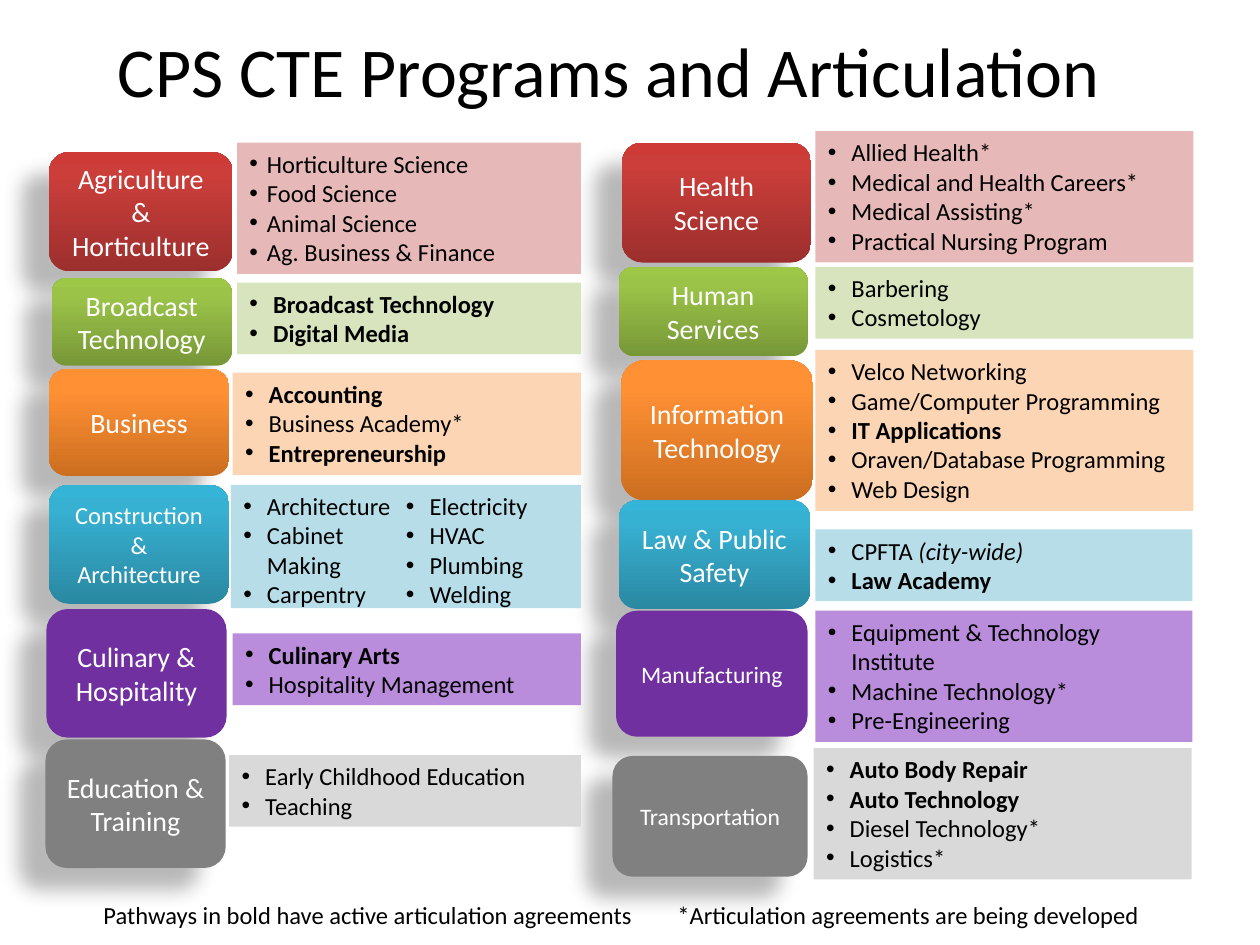
from copy import deepcopy

from pptx import Presentation
from pptx.dml.color import RGBColor
from pptx.enum.shapes import MSO_SHAPE as SHAPE
from pptx.enum.text import MSO_ANCHOR as ANCHOR, MSO_AUTO_SIZE as AUTO_SIZE, PP_ALIGN as ALIGN
from pptx.oxml import parse_xml
from pptx.oxml.ns import nsdecls, qn
from pptx.util import Pt


def color(value):
    return RGBColor.from_string(value)


def add_run(paragraph, text, size, hex_color="000000", bold=False, italic=False):
    run = paragraph.add_run()
    run.text = text
    font = run.font
    font.name, font.size = "Calibri", Pt(size)
    font.bold, font.italic = bold, italic
    font.color.rgb = color(hex_color)


# Row colours: cluster fill (dark to light, or solid) and list fill
PALETTE = [
    (["9C2F2D", "CB3E3A", "CE3B37"], "E6B9B8"),
    (["779737", "9BC348", "9DC746"], "D7E4BD"),
    (["CC6E20", "FF9034", "FF9136"], "FCD5B5"),
    (["2A88A2", "37B1D2", "34B4D6"], "B7DEE8"),
    (["7030A0"], "BA8CDC"),
    (["808080"], "D9D9D9"),
]

# Cluster name, text size, cluster box, list box, programs; six rows per column
CLUSTERS = [
    ("Agriculture & Horticulture", 16, (28, 87, 105, 68), (135.5, 81.5, 196.5, 75),
     ["Horticulture Science", "Food Science", "Animal Science", "Ag. Business & Finance"]),
    ("Broadcast Technology", 16, (29.5, 159, 103, 50), (135.5, 161.5, 196.5, 41),
     ["Broadcast Technology", "Digital Media"]),
    ("Business", 16, (28, 211, 103, 61), (133, 213, 199, 58.5),
     ["Accounting", "Business Academy*", "Entrepreneurship"]),
    ("Construction & Architecture", 14, (28, 277, 103, 68), (132, 277, 200, 70.5),
     ["Architecture", "Cabinet Making", "Carpentry", "Electricity", "HVAC", "Plumbing",
      "Welding"]),
    ("Culinary & Hospitality", 16, (26.5, 348, 103, 73.5), (133, 362, 199, 41),
     ["Culinary Arts", "Hospitality Management"]),
    ("Education & Training", 16, (26, 422.5, 103, 73.5), (131, 431.5, 201, 41),
     ["Early Childhood Education", "Teaching"]),
    ("Health Science", 16, (355.5, 81.5, 108, 68.5), (466, 75, 216, 75),
     ["Allied Health*", "Medical and Health Careers*", "Medical Assisting*",
      "Practical Nursing Program"]),
    ("Human Services", 16, (353.5, 152.5, 108, 51), (466, 152.5, 216, 41),
     ["Barbering", "Cosmetology"]),
    ("Information Technology", 16, (355, 206, 109.5, 80), (466, 200, 216, 92),
     ["Velco Networking", "Game/Computer Programming", "IT Applications",
      "Oraven/Database Programming", "Web Design"]),
    ("Law & Public Safety", 16, (353.5, 286, 109.5, 62), (466, 302.5, 215.5, 41),
     ["CPFTA (city-wide)", "Law Academy"]),
    ("Manufacturing", 13.5, (352, 349, 109.5, 72), (466, 349, 215.5, 75),
     ["Equipment & Technology Institute", "Machine Technology*", "Pre-Engineering"]),
    ("Transportation", 13.5, (350, 432, 111.5, 69), (465, 427.5, 216, 75),
     ["Auto Body Repair", "Auto Technology", "Diesel Technology*", "Logistics*"]),
]

# Programs with active articulation agreements
ACTIVE = {"Broadcast Technology", "Digital Media", "Accounting", "Entrepreneurship",
          "Culinary Arts", "IT Applications", "Law Academy", "Auto Body Repair",
          "Auto Technology"}

SHADOW = (f'<a:effectLst {nsdecls("a")}><a:outerShdw blurRad="{Pt(11.8)}" dist="{Pt(19.7)}" '
          f'dir="{141 * 60000}" algn="ctr" rotWithShape="0"><a:srgbClr val="000000">'
          '<a:alpha val="28000"/></a:srgbClr></a:outerShdw></a:effectLst>')

presentation = Presentation()
presentation.slide_width, presentation.slide_height = Pt(720), Pt(540)
slide = presentation.slides.add_slide(presentation.slide_layouts[5])

# Title
title = slide.shapes.title
title.left, title.top, title.width, title.height = Pt(44), Pt(12), Pt(617), Pt(55.5)
title.text_frame.auto_size = AUTO_SIZE.NONE
title.text_frame.vertical_anchor = ANCHOR.TOP
paragraph = title.text_frame.paragraphs[0]
paragraph.alignment = ALIGN.CENTER
add_run(paragraph, "CPS CTE Programs and Articulation ", 40)

# Career clusters
for index, (name, size, box, _, _) in enumerate(CLUSTERS):
    stops = PALETTE[index % 6][0]
    shape = slide.shapes.add_shape(SHAPE.ROUNDED_RECTANGLE, *map(Pt, box))
    shape.line.fill.background()
    if len(stops) == 1:
        shape.fill.solid()
        shape.fill.fore_color.rgb = color(stops[0])
    else:
        shape.fill.gradient()
        shape.fill.gradient_angle = 90
        stop_list = shape._element.spPr.find(".//" + qn("a:gsLst"))
        stop_list.append(deepcopy(stop_list[-1]))
        for stop, position, value in zip(shape.fill.gradient_stops, (0, 0.8, 1), stops):
            stop.position = position
            stop.color.rgb = color(value)
    shape._element.spPr.append(parse_xml(SHADOW))
    shape.text_frame.word_wrap = True
    shape.text_frame.vertical_anchor = ANCHOR.MIDDLE
    paragraph = shape.text_frame.paragraphs[0]
    paragraph.alignment = ALIGN.CENTER
    add_run(paragraph, name, size, "FFFFFF")

# Program lists
for index, (name, _, _, box, programs) in enumerate(CLUSTERS):
    shape = slide.shapes.add_shape(SHAPE.RECTANGLE, *map(Pt, box))
    shape.shadow.inherit = False
    shape.line.fill.background()
    shape.fill.solid()
    shape.fill.fore_color.rgb = color(PALETTE[index % 6][1])
    frame = shape.text_frame
    frame.word_wrap = True
    frame.vertical_anchor = ANCHOR.TOP
    if name.startswith("Construction"):
        frame._txBody.bodyPr.set("numCol", "2")
    indent = Pt(10 if index == 0 else 13.5)
    for number, program in enumerate(programs):
        paragraph = frame.add_paragraph() if number else frame.paragraphs[0]
        paragraph.alignment = ALIGN.LEFT
        properties = paragraph._p.get_or_add_pPr()
        properties.set("marL", str(indent))
        properties.set("indent", str(-indent))
        properties.append(parse_xml(f'<a:buFont {nsdecls("a")} typeface="Arial"/>'))
        properties.append(parse_xml(f'<a:buChar {nsdecls("a")} char="•"/>'))
        label, bracket, note = program.partition("(")
        add_run(paragraph, label, 14, bold=program in ACTIVE)
        if note:
            add_run(paragraph, bracket + note, 14, italic=True)

# Footnotes
for text, left, top, width in [
    ("Pathways in bold have active articulation agreements", 52, 511, 328.5),
    ("*Articulation agreements are being developed", 380, 510.5, 281),
]:
    box = slide.shapes.add_textbox(Pt(left), Pt(top), Pt(width), Pt(24.5))
    box.text_frame.word_wrap = True
    add_run(box.text_frame.paragraphs[0], text, 14)

presentation.save("out.pptx")
